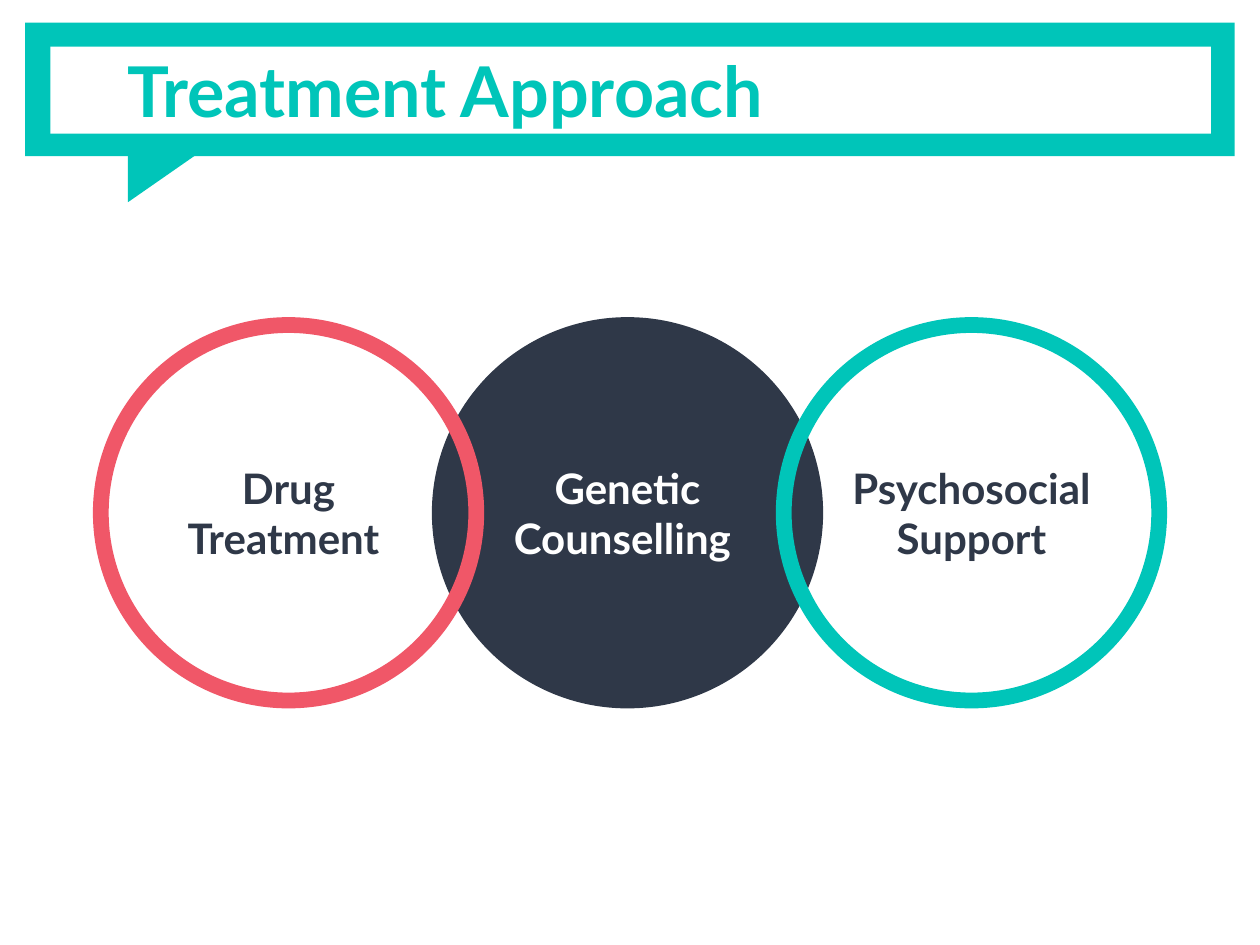
from pptx import Presentation
from pptx import util as u
from pptx.dml.color import RGBColor
from pptx.enum import shapes, text

TEAL = RGBColor(0x00, 0xC5, 0xB9)
NAVY = RGBColor(0x2F, 0x38, 0x48)
CORAL = RGBColor(0xF0, 0x57, 0x68)
WHITE = RGBColor(0xFF, 0xFF, 0xFF)
KIND = shapes.MSO_SHAPE


def write(shape, words, size, color, align):
    """Put bold, vertically centred text into a shape."""
    frame = shape.text_frame
    frame.word_wrap = True
    frame.auto_size = text.MSO_AUTO_SIZE.NONE
    frame.vertical_anchor = text.MSO_ANCHOR.MIDDLE
    frame.margin_left = frame.margin_right = u.Inches(0.1)
    frame.margin_top = frame.margin_bottom = u.Inches(0.1)
    para = frame.paragraphs[0]
    para.alignment = align
    run = para.add_run()
    run.text = words
    font = run.font
    font.name, font.size, font.bold = "Lato", u.Pt(size), True
    font.color.rgb = color


class Deck:
    def __init__(self, slide):
        self.slide = slide

    def shape(self, kind, *box, fill=None, line=None, turn=0):
        item = self.slide.shapes.add_shape(kind, *map(u.Inches, box))
        item.shadow.inherit = False
        item.rotation = turn
        if fill is None:
            item.fill.background()
        else:
            item.fill.solid()
            item.fill.fore_color.rgb = fill
        if line is None:
            item.line.fill.background()
        else:
            item.line.color.rgb = line
            item.line.width = u.Pt(9)
        return item

    def ring(self, left, words, line, color=NAVY, fill=None):
        item = self.shape(KIND.OVAL, left, 2.58, 2.98, 2.98, fill=fill, line=line)
        write(item, words, 24, color, text.PP_ALIGN.CENTER)

    def title(self, words, *box):
        item = self.slide.shapes.title
        item.left, item.top, item.width, item.height = map(u.Inches, box)
        write(item, words, 40, TEAL, text.PP_ALIGN.LEFT)
        # Bring the title in front of the banner
        self.slide.shapes._spTree.append(item._element)


def main():
    show = Presentation()
    show.slide_width, show.slide_height = u.Inches(10), u.Inches(7.5)
    deck = Deck(show.slides.add_slide(show.slide_layouts[5]))

    # Speech-bubble banner
    deck.shape(KIND.RECTANGLE, 0.2, 0.18, 9.6, 1.06, fill=TEAL)
    deck.shape(KIND.RIGHT_TRIANGLE, 1.12, 1.02, 0.48, 0.69, fill=TEAL, turn=90)
    deck.shape(KIND.RECTANGLE, 0.4, 0.37, 9.21, 0.69, fill=WHITE)

    # Overlapping circles, the filled one at the back
    deck.ring(3.49, "Genetic Counselling ", NAVY, color=WHITE, fill=NAVY)
    deck.ring(0.8, "Drug Treatment ", CORAL)
    deck.ring(6.22, "Psychosocial Support", TEAL)

    deck.title("Treatment Approach", 0.91, 0.18, 8.7, 1.06)
    show.save("out.pptx")


if __name__ == "__main__":
    main()
